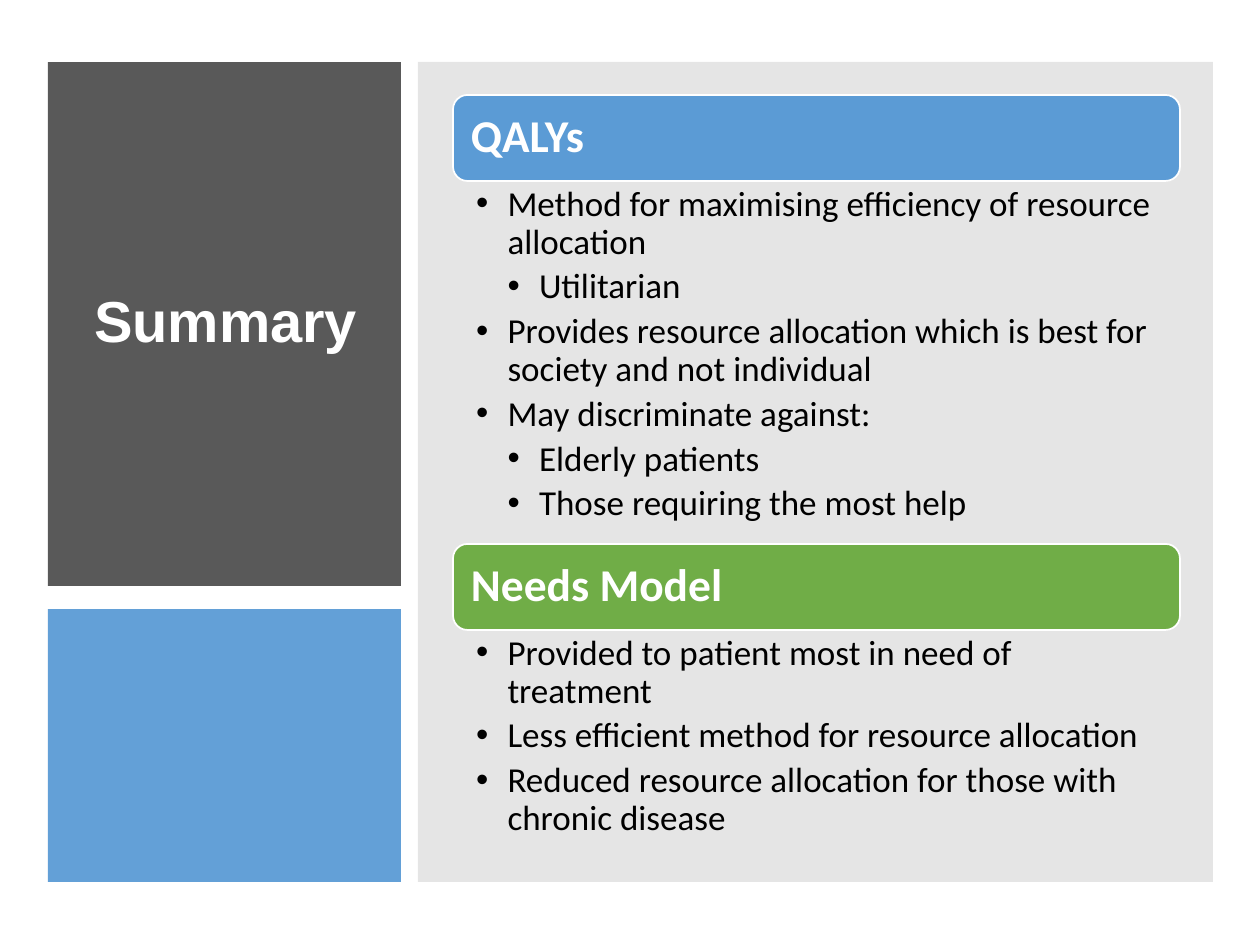
from lxml import etree
from pptx import Presentation
from pptx.dml.color import RGBColor
from pptx.enum.shapes import MSO_SHAPE
from pptx.enum.text import MSO_ANCHOR, PP_ALIGN
from pptx.oxml.ns import qn
from pptx.util import Emu, Pt

SCALE = 914400 / 126

WHITE, BLUE, GREEN = "FFFFFF", "5B9BD5", "70AD47"
TITLE = dict(name="Arial", size=Pt(33), bold=True, color=WHITE)
HEAD = dict(name="Calibri", size=Pt(26), bold=True, color=WHITE)
BODY = dict(name="Calibri", size=Pt(20), bold=False, color="000000")

# heading, colour, top, body height, (level, text) items
PARTS = [
    ("QALYs", BLUE, 95, 363, [
        (1, "Method for maximising efficiency of resource allocation"),
        (2, "Utilitarian"),
        (1, "Provides resource allocation which is best for society "
            "and not individual"),
        (1, "May discriminate against:"),
        (2, "Elderly patients"),
        (2, "Those requiring the most help"),
    ]),
    ("Needs Model", GREEN, 544, 219, [
        (1, "Provided to patient most in need of treatment"),
        (1, "Less efficient method for resource allocation"),
        (1, "Reduced resource allocation for those with chronic disease"),
    ]),
]


def px(num):
    return Emu(round(num * SCALE))


def rgb(code):
    return RGBColor.from_string(code)


class Deck:
    def __init__(self, wide, high):
        self.prs = Presentation()
        self.prs.slide_width, self.prs.slide_height = px(wide), px(high)
        self.slide = self.prs.slides.add_slide(self.prs.slide_layouts[6])

    def block(self, box, fill, alpha=100, kind=MSO_SHAPE.RECTANGLE, line=None):
        """Add a filled shape; alpha is its opacity in percent."""
        shape = self.slide.shapes.add_shape(kind, *map(px, box))
        shape.shadow.inherit = False
        shape.fill.solid()
        shape.fill.fore_color.rgb = rgb(fill)
        if alpha < 100:
            color = shape.fill._xPr.find(".//" + qn("a:srgbClr"))
            etree.SubElement(color, qn("a:alpha"), val=str(alpha * 1000))
        if line:
            shape.line.color.rgb = rgb(line)
            shape.line.width = Pt(1)
        else:
            shape.line.fill.background()

    def frame(self, box, pads, anchor):
        frame = self.slide.shapes.add_textbox(*map(px, box)).text_frame
        frame.word_wrap = True
        frame.vertical_anchor = anchor
        for side, pad in zip(("left", "top", "right", "bottom"), pads):
            setattr(frame, "margin_" + side, px(pad))
        return frame

    def put(self, para, text, style, after=0):
        """Fill one paragraph with styled text."""
        para.add_run().text = text
        para.alignment = PP_ALIGN.LEFT
        para.line_spacing = 0.9
        para.space_after = Pt(after)
        for key, val in style.items():
            if key == "color":
                para.font.color.rgb = rgb(val)
            else:
                setattr(para.font, key, val)

    def label(self, box, pads, text, style):
        frame = self.frame(box, pads, MSO_ANCHOR.MIDDLE)
        self.put(frame.paragraphs[0], text, style)

    def bullets(self, box, items):
        frame = self.frame(box, (23, 5, 25, 5), MSO_ANCHOR.TOP)
        for num, (level, text) in enumerate(items):
            para = frame.add_paragraph() if num else frame.paragraphs[0]
            para.level = level
            props = para._p.get_or_add_pPr()
            props.set("marL", str(px(level * 31.5)))
            props.set("indent", str(px(-31.5)))
            etree.SubElement(props, qn("a:buFont"), typeface="Arial")
            etree.SubElement(props, qn("a:buChar"), char="•")
            self.put(para, text, BODY, after=4)


def main():
    deck = Deck(1260, 945)
    deck.block((48, 62, 353, 524), "595959")
    deck.label((81, 101, 293, 446), (13, 6, 13, 6), "Summary", TITLE)
    deck.block((48, 609, 353, 273), BLUE, alpha=95)
    deck.block((418, 62, 795, 820), "808080", alpha=20)

    left, wide, high, gap = 453, 727, 86, 4
    for name, fill, top, deep, items in PARTS:
        deck.block((left, top, wide, high), fill,
                   kind=MSO_SHAPE.ROUNDED_RECTANGLE, line=WHITE)
        inner = (left + gap, top + gap, wide - 2 * gap, high - 2 * gap)
        deck.label(inner, (14,) * 4, name, HEAD)
        deck.bullets((left, top + high, wide, deep), items)
    deck.prs.save("out.pptx")


if __name__ == "__main__":
    main()
